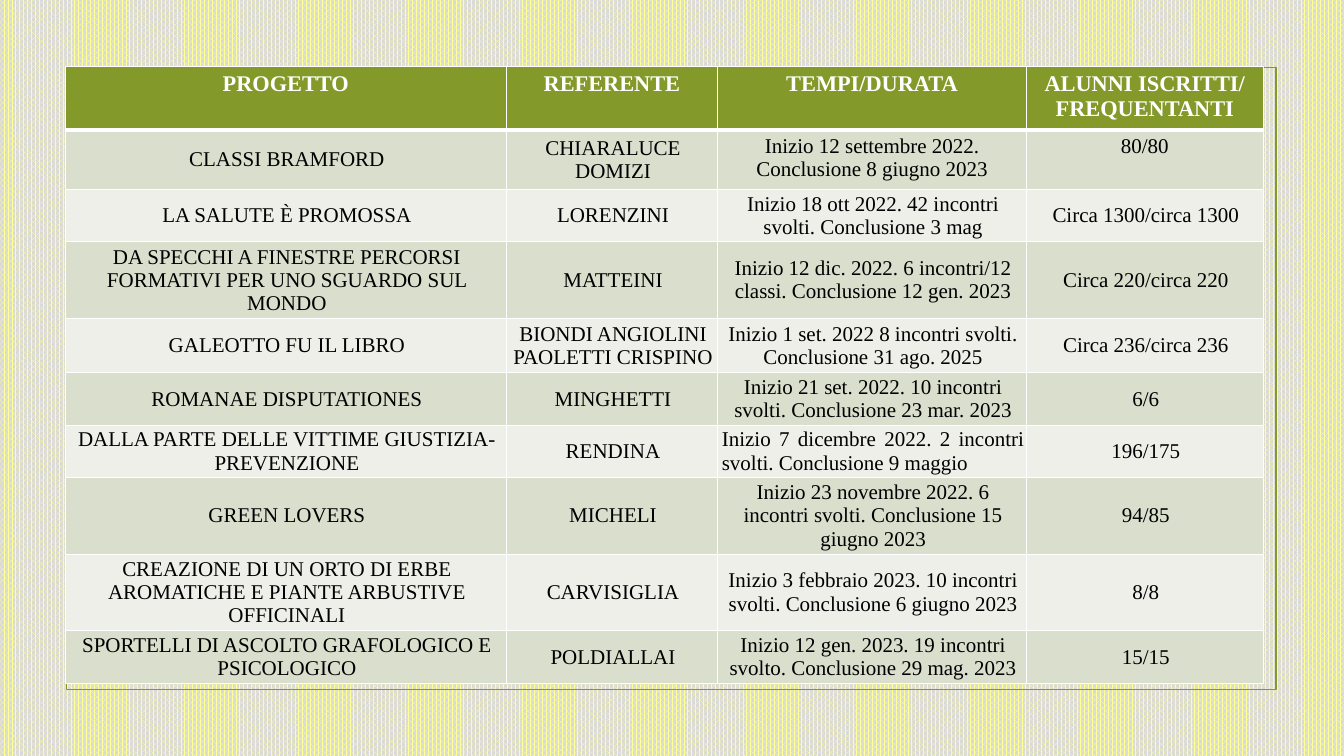
from lxml.etree import SubElement
from pptx import Presentation
from pptx.dml.color import RGBColor
from pptx.enum.dml import MSO_PATTERN
from pptx.enum.shapes import MSO_SHAPE
from pptx.enum.text import MSO_ANCHOR, PP_ALIGN
from pptx.oxml.ns import qn
from pptx.util import Inches, Pt

GREEN, WHITE, BLACK = "83992A", "FFFFFF", "000000"
BANDS = ("D9DECD", "EDEFE8")
COLUMN_WIDTHS = (4.37, 2.1, 3.06, 2.35)
ROW_HEIGHTS = (0.63, 0.59, 0.52, 0.76, 0.54, 0.52, 0.52, 0.76, 0.76, 0.52)
HEADINGS = ("PROGETTO", "REFERENTE", "TEMPI/DURATA", "ALUNNI ISCRITTI/\nFREQUENTANTI")
PROJECTS = (
    ("CLASSI BRAMFORD", "CHIARALUCE DOMIZI",
     "Inizio 12 settembre 2022. Conclusione 8 giugno 2023", "80/80"),
    ("LA SALUTE È PROMOSSA", "LORENZINI",
     "Inizio 18 ott 2022. 42 incontri svolti. Conclusione 3 mag", "Circa 1300/circa 1300"),
    ("DA SPECCHI A FINESTRE PERCORSI FORMATIVI PER UNO SGUARDO SUL MONDO", "MATTEINI",
     "Inizio 12 dic. 2022. 6 incontri/12 classi. Conclusione 12 gen. 2023",
     "Circa 220/circa 220"),
    ("GALEOTTO FU IL LIBRO", "BIONDI ANGIOLINI PAOLETTI CRISPINO",
     "Inizio 1 set. 2022 8 incontri svolti. Conclusione 31 ago. 2025",
     "Circa 236/circa 236"),
    ("ROMANAE DISPUTATIONES", "MINGHETTI",
     "Inizio 21 set. 2022. 10 incontri svolti. Conclusione 23 mar. 2023", "6/6"),
    ("DALLA PARTE DELLE VITTIME GIUSTIZIA-PREVENZIONE", "RENDINA",
     "Inizio 7 dicembre 2022. 2 incontri svolti. Conclusione 9 maggio", "196/175"),
    ("GREEN LOVERS", "MICHELI",
     "Inizio 23 novembre 2022. 6 incontri svolti. Conclusione 15 giugno 2023", "94/85"),
    ("CREAZIONE DI UN ORTO DI ERBE AROMATICHE E PIANTE ARBUSTIVE OFFICINALI", "CARVISIGLIA",
     "Inizio 3 febbraio 2023. 10 incontri svolti. Conclusione 6 giugno 2023", "8/8"),
    ("SPORTELLI DI ASCOLTO GRAFOLOGICO E PSICOLOGICO", "POLDIALLAI",
     "Inizio 12 gen. 2023. 19 incontri svolto. Conclusione 29 mag. 2023", "15/15"),
)
JUSTIFIED = {(6, 2)}
ROOMY = {(1, 2), (1, 3)}


def color(value):
    return RGBColor.from_string(value)


def write(frame, text, size=15, fill=BLACK, bold=False, align=PP_ALIGN.CENTER):
    frame.text = text
    for para in frame.paragraphs:
        para.alignment = align
        for span in para.runs:
            span.font.name = "Times New Roman"
            span.font.size = Pt(size)
            span.font.bold = bold
            span.font.color.rgb = color(fill)


def set_borders(cell, bottom=1, top=1):
    properties = cell._tc.get_or_add_tcPr()
    for side, width in (("L", 1), ("R", 1), ("T", top), ("B", bottom)):
        line = SubElement(properties, qn(f"a:ln{side}"), w=str(Pt(width)))
        SubElement(SubElement(line, qn("a:solidFill")), qn("a:srgbClr"), val=WHITE)


def set_fill(cell, value):
    cell.fill.solid()
    cell.fill.fore_color.rgb = color(value)


def tighten(cell):
    cell.vertical_anchor = MSO_ANCHOR.MIDDLE
    cell.margin_left, cell.margin_right = Inches(0.04), Inches(0.02)
    cell.margin_top = cell.margin_bottom = Inches(0.01)


def paint_background(page):
    fill = page.background.fill
    fill.patterned()
    fill.pattern = MSO_PATTERN.PERCENT_75
    fill.fore_color.rgb = color("FFFF99")
    fill.back_color.rgb = color("D9D9D9")


def add_frame(page, left, top, width, height):
    box = page.shapes.add_shape(
        MSO_SHAPE.RECTANGLE, Inches(left), Inches(top), Inches(width), Inches(height))
    box.shadow.inherit = False
    box.fill.background()
    box.line.color.rgb = color(GREEN)
    box.line.width = Pt(1.25)


def add_projects(page, left, top, width, height):
    table = page.shapes.add_table(
        len(ROW_HEIGHTS), len(COLUMN_WIDTHS),
        Inches(left), Inches(top), Inches(width), Inches(height)).table
    for column, size in zip(table.columns, COLUMN_WIDTHS):
        column.width = Inches(size)
    for row, size in zip(table.rows, ROW_HEIGHTS):
        row.height = Inches(size)
    for column, heading in enumerate(HEADINGS):
        cell = table.cell(0, column)
        write(cell.text_frame, heading, size=16, fill=WHITE, bold=True)
        set_borders(cell, bottom=3)
        set_fill(cell, GREEN)
    for row, project in enumerate(PROJECTS, 1):
        for column, text in enumerate(project):
            cell = table.cell(row, column)
            align = PP_ALIGN.JUSTIFY if (row, column) in JUSTIFIED else PP_ALIGN.CENTER
            write(cell.text_frame, text, align=align)
            if (row, column) not in ROOMY:
                tighten(cell)
            set_borders(cell, top=3 if row == 1 else 1)
            set_fill(cell, BANDS[(row - 1) % 2])


def main():
    deck = Presentation()
    deck.slide_width, deck.slide_height = Inches(13.33), Inches(7.5)
    page = deck.slides.add_slide(deck.slide_layouts[6])
    paint_background(page)
    add_frame(page, 0.66, 0.67, 12, 6.17)
    add_projects(page, 0.65, 0.66, sum(COLUMN_WIDTHS), sum(ROW_HEIGHTS))
    deck.save("out.pptx")


if __name__ == "__main__":
    main()
